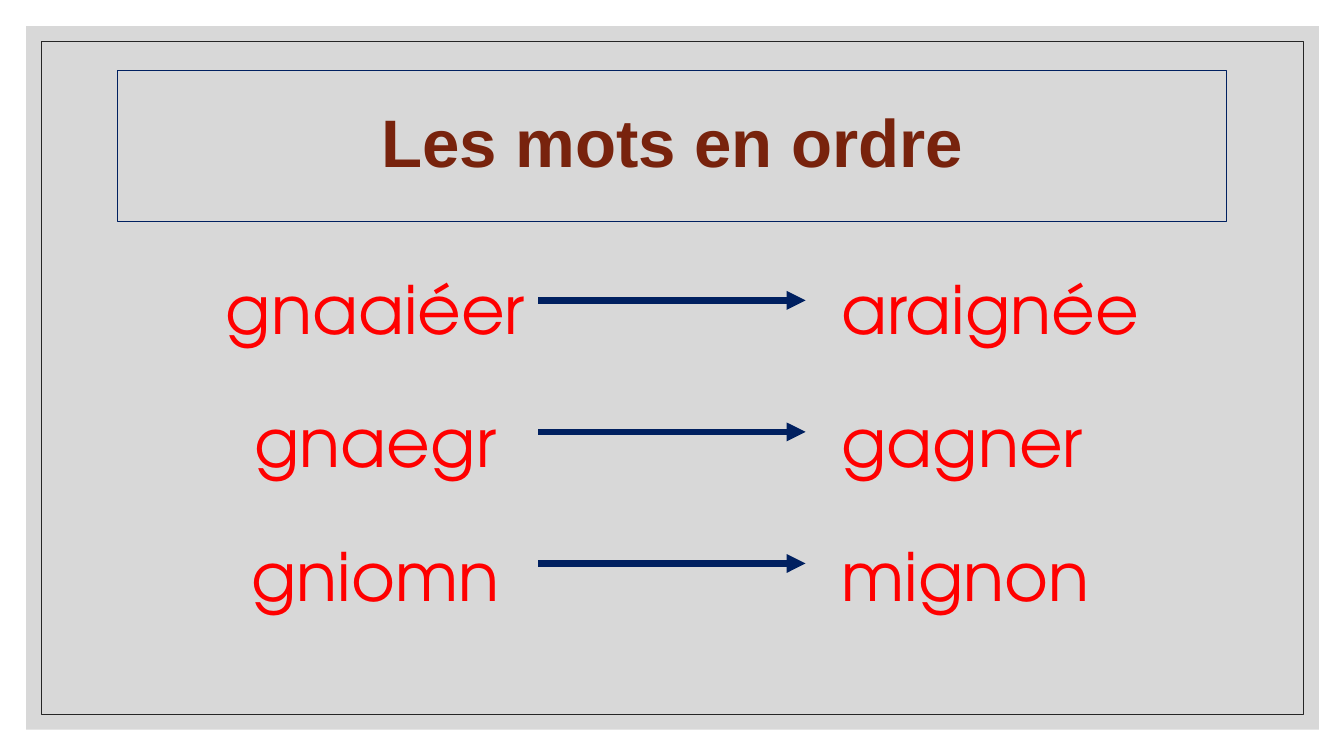
from dataclasses import dataclass

from lxml.etree import SubElement
from pptx import Presentation
from pptx.dml.color import RGBColor
from pptx.enum.shapes import MSO_CONNECTOR, MSO_SHAPE
from pptx.enum.text import MSO_ANCHOR, PP_ALIGN
from pptx.oxml.ns import qn
from pptx.util import Inches, Pt


@dataclass(frozen=True)
class Theme:
    panel: RGBColor = RGBColor(0xBF, 0xBF, 0xBF)
    panel_opacity: int = 60
    border: RGBColor = RGBColor(0x26, 0x26, 0x26)
    navy: RGBColor = RGBColor(0x00, 0x20, 0x60)
    heading: RGBColor = RGBColor(0x78, 0x23, 0x0D)
    word: RGBColor = RGBColor(0xFF, 0x00, 0x00)
    heading_font: str = "Arial"
    word_font: str = "TeX Gyre Adventor"
    text_size: int = 48


THEME = Theme()

WORD_PAIRS = [
    ("gnaaiéer", "araignée"),
    ("gnaegr", "gagner"),
    ("gniomn", "mignon"),
]
FIRST_ARROW_Y = 2.98
ARROW_STEP = 1.305


def add_frame(slide, left, top, width, height, line=None, weight=0.5):
    """Add an unfilled rectangle, outlined when a line colour is given."""
    frame = slide.shapes.add_shape(
        MSO_SHAPE.RECTANGLE,
        Inches(left), Inches(top), Inches(width), Inches(height))
    frame.shadow.inherit = False
    frame.fill.background()
    if line is None:
        frame.line.fill.background()
    else:
        frame.line.color.rgb = line
        frame.line.width = Pt(weight)
    return frame


def add_panel(slide):
    panel = add_frame(slide, 0.26, 0.26, 12.82, 6.98)
    panel.fill.solid()
    panel.fill.fore_color.rgb = THEME.panel
    color = panel.fill._xPr.find(qn("a:solidFill")).find(qn("a:srgbClr"))
    SubElement(color, qn("a:alpha"), val=str(THEME.panel_opacity * 1000))


def style_font(font, name, color, bold=False):
    font.name = name
    font.size = Pt(THEME.text_size)
    font.color.rgb = color
    font.bold = bold


def add_heading(slide, text):
    heading = add_frame(slide, 1.17, 0.7, 11, 1.5, THEME.navy, 0.75)
    heading.text_frame.vertical_anchor = MSO_ANCHOR.MIDDLE
    paragraph = heading.text_frame.paragraphs[0]
    paragraph.text = text
    paragraph.alignment = PP_ALIGN.CENTER
    paragraph.line_spacing = 0.9
    style_font(paragraph.font, THEME.heading_font, THEME.heading, bold=True)


def add_word_column(slide, left, width, words, alignment):
    column = slide.shapes.add_textbox(
        Inches(left), Inches(2.2), Inches(width), Inches(4.1)).text_frame
    column.word_wrap = True
    column.text = "\n".join(words)
    for paragraph in column.paragraphs:
        paragraph.alignment = alignment
        paragraph.line_spacing = 1.5
        paragraph.space_before = Pt(9)
        style_font(paragraph.font, THEME.word_font, THEME.word)
        # Small left indent
        properties = paragraph._p.get_or_add_pPr()
        properties.set("marL", str(Inches(0.05)))
        properties.set("indent", "0")


def add_arrow(slide, y):
    arrow = slide.shapes.add_connector(
        MSO_CONNECTOR.STRAIGHT,
        Inches(5.34), Inches(y), Inches(7.99), Inches(y))
    arrow.line.color.rgb = THEME.navy
    arrow.line.width = Pt(4.5)
    SubElement(arrow.line._get_or_add_ln(), qn("a:tailEnd"), type="triangle")
    SubElement(arrow._element.spPr, qn("a:effectLst"))


def main():
    presentation = Presentation()
    presentation.slide_width = Inches(13.33)
    presentation.slide_height = Inches(7.5)
    slide = presentation.slides.add_slide(presentation.slide_layouts[6])

    # Background panel and border
    add_panel(slide)
    add_frame(slide, 0.41, 0.41, 12.52, 6.68, THEME.border)

    add_heading(slide, "Les mots en ordre")

    # Scrambled words, solutions and the arrows between them
    scrambled, solutions = zip(*WORD_PAIRS)
    add_word_column(slide, 1.5, 4.4, scrambled, PP_ALIGN.CENTER)
    add_word_column(slide, 8.2, 3.59, solutions, PP_ALIGN.LEFT)
    for row in range(len(WORD_PAIRS)):
        add_arrow(slide, FIRST_ARROW_Y + row * ARROW_STEP)

    presentation.save("out.pptx")


if __name__ == "__main__":
    main()
